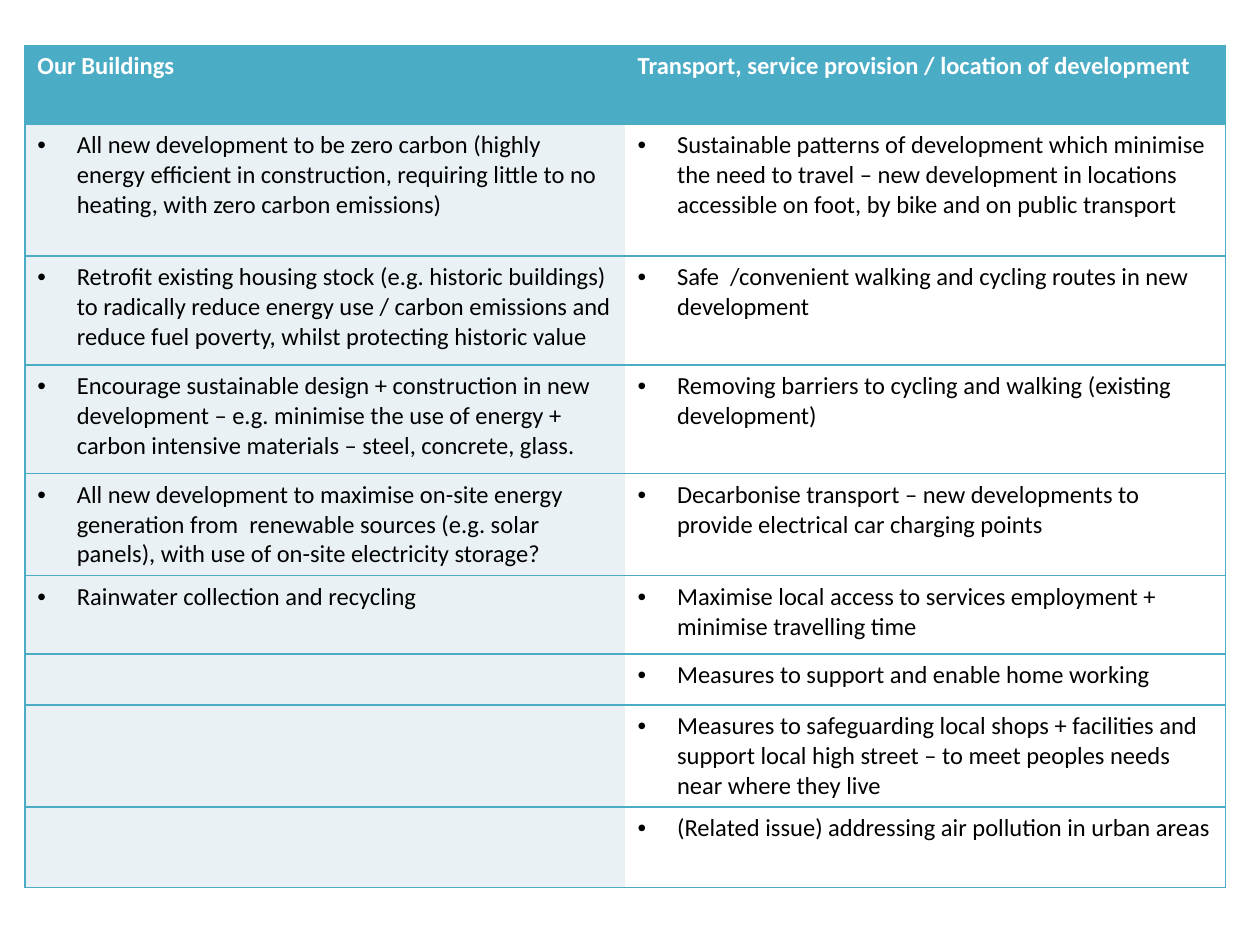
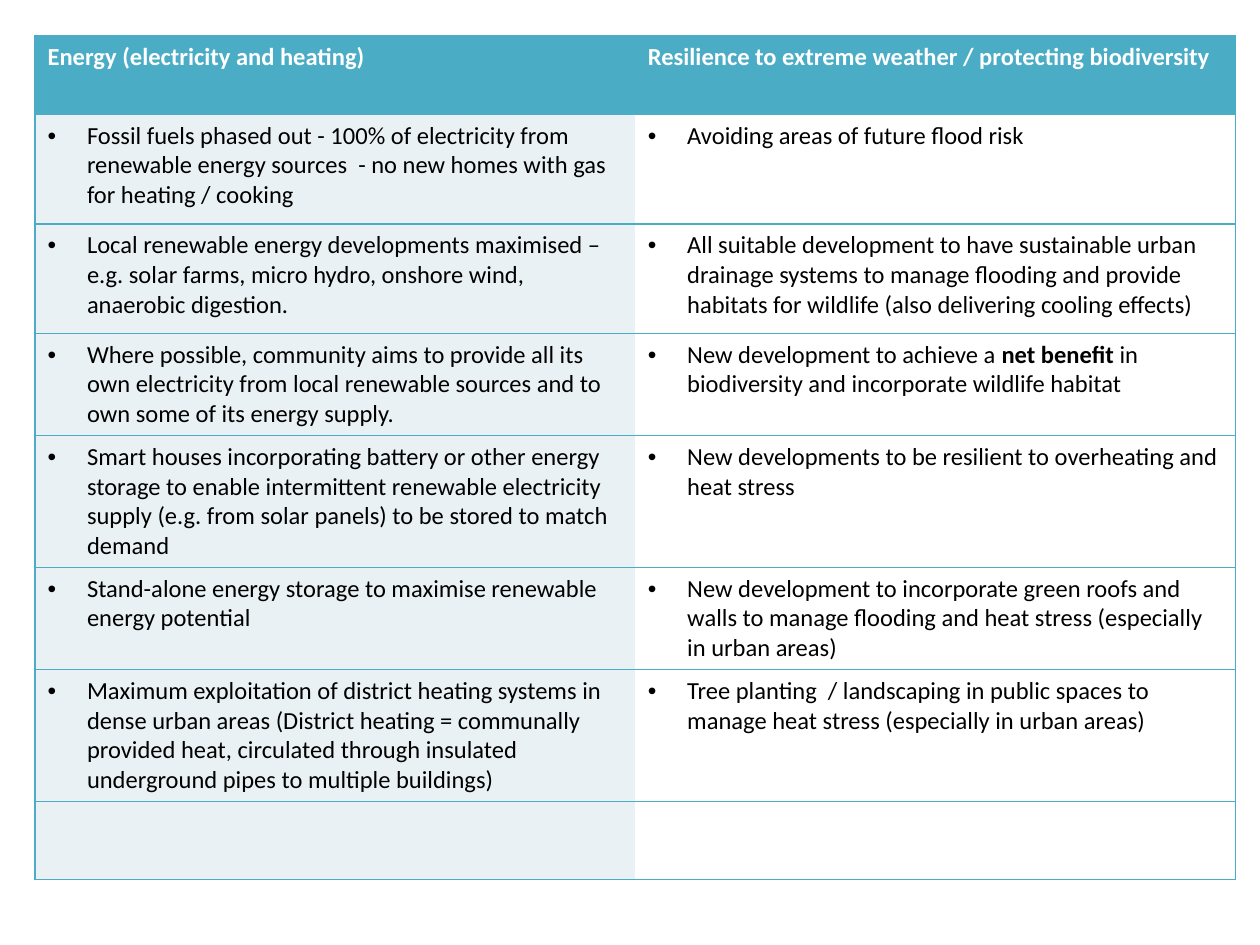
"""Builds two slides of planning measures against climate change, one two-column table each."""
from dataclasses import dataclass
from typing import Any

from lxml import etree
from pptx import Presentation
from pptx import util as u
from pptx.dml.color import RGBColor
from pptx.enum import text as t
from pptx.oxml.ns import qn

BUILDINGS_AND_TRANSPORT = [
    (45, "Our Buildings",
     "Transport, service provision / location of development"),
    (75.5, "All new development to be zero carbon (highly energy efficient in construction, "
     "requiring little to no heating, with zero carbon emissions)",
     "Sustainable patterns of development which minimise the need to travel – new development "
     "in locations accessible on foot, by bike and on public transport"),
    (62.3, "Retrofit existing housing stock (e.g. historic buildings) to radically reduce energy "
     "use / carbon emissions and reduce fuel poverty, whilst protecting historic value",
     "Safe  /convenient walking and cycling routes in new development"),
    (62, "Encourage sustainable design + construction in new development – e.g. minimise the use "
     "of energy + carbon intensive materials – steel, concrete, glass.",
     "Removing barriers to cycling and walking (existing development)"),
    (58.3, "All new development to maximise on-site energy generation from  renewable sources "
     "(e.g. solar panels), with use of on-site electricity storage?",
     "Decarbonise transport – new developments to provide electrical car charging points"),
    (44.6, "Rainwater collection and recycling",
     "Maximise local access to services employment + minimise travelling time"),
    (28.6, "", "Measures to support and enable home working"),
    (58.3, "", "Measures to safeguarding local shops + facilities and support local high street "
     "– to meet peoples needs near where they live"),
    (46.2, "", "(Related issue) addressing air pollution in urban areas"),
]

ENERGY_AND_RESILIENCE = [
    (44.8, "Energy (electricity and heating)",
     "Resilience to extreme weather / protecting biodiversity"),
    (62.6, "Fossil fuels phased out - 100% of electricity from renewable energy sources  - no new "
     "homes with gas for heating / cooking",
     "Avoiding areas of future flood risk"),
    (62.6, "Local renewable energy developments maximised – e.g. solar farms, micro hydro, "
     "onshore wind, anaerobic digestion.",
     "All suitable development to have sustainable urban drainage systems to manage flooding "
     "and provide habitats for wildlife (also delivering cooling effects)"),
    (58.3, "Where possible, community aims to provide all its own electricity from local "
     "renewable sources and to own some of its energy supply.",
     "New development to achieve a **net benefit **in biodiversity and incorporate wildlife "
     "habitat"),
    (75.4, "Smart houses incorporating battery or other energy storage to enable intermittent "
     "renewable electricity  supply (e.g. from solar panels) to be stored to match demand",
     "New developments to be resilient to overheating and heat stress"),
    (58.3, "Stand-alone energy storage to maximise renewable energy potential",
     "New development to incorporate green roofs and walls to manage flooding and heat stress "
     "(especially in urban areas)"),
    (75.4, "Maximum exploitation of district heating systems in dense urban areas (District "
     "heating = communally provided heat, circulated through insulated underground pipes to "
     "multiple buildings)",
     "Tree planting  / landscaping in public spaces to manage heat stress (especially in urban "
     "areas)"),
    (44.6, "", ""),
]


def rgb(value):
    """Turn a hex string into a colour."""
    return RGBColor.from_string(value)


def write(frame, content, *, font, size, color, bold=False, indent=0):
    """Write text into a frame, with **marked** parts in bold and a bullet if indented."""
    paragraph = frame.paragraphs[0]
    paragraph.alignment = t.PP_ALIGN.LEFT
    for place, part in enumerate(content.split("**")):
        run = paragraph.add_run()
        run.text = part
        run.font.name, run.font.size = font, u.Pt(size)
        run.font.bold = bold or place % 2 == 1
        run.font.color.rgb = rgb(color)
    if indent:
        margins = paragraph._p.get_or_add_pPr()
        margins.set("marL", str(u.Pt(indent)))
        margins.set("indent", str(-u.Pt(indent)))
        etree.SubElement(margins, qn("a:buFont")).set("typeface", "Arial")
        etree.SubElement(margins, qn("a:buChar")).set("char", "•")


@dataclass
class Deck:
    """Holds the style and the current slide."""
    show: Any
    slide: Any = None
    font: str = "Calibri"
    size: float = 14
    accent: str = "4BACC6"
    tint: str = "E9F1F5"
    paper: str = "FFFFFF"
    ink: str = "000000"
    column_width: float = 343
    bullet_indent: float = 22.5

    def new_slide(self):
        """Start a blank slide."""
        self.slide = self.show.slides.add_slide(self.show.slide_layouts[6])

    def borders(self, cell, sides):
        """Draw the accent line on the named sides of a cell and clear the others."""
        properties = cell._tc.get_or_add_tcPr()
        for place, side in enumerate("LRTB"):
            line = etree.Element(qn(f"a:ln{side}"), w=str(u.Pt(1)))
            if side in sides:
                fill = etree.SubElement(line, qn("a:solidFill"))
                etree.SubElement(fill, qn("a:srgbClr")).set("val", self.accent)
            else:
                etree.SubElement(line, qn("a:noFill"))
            properties.insert(place, line)

    def measures(self, left, top, rows):
        """Add a table of measures under two headings."""
        height = sum(row[0] for row in rows)
        table = self.slide.shapes.add_table(
            len(rows), 2, u.Pt(left), u.Pt(top), u.Pt(2 * self.column_width), u.Pt(height)).table
        table.horz_banding = False
        for column in table.columns:
            column.width = u.Pt(self.column_width)
        for number, (row_height, *entries) in enumerate(rows):
            table.rows[number].height = u.Pt(row_height)
            heading = number == 0
            for side, entry in enumerate(entries):
                cell = table.cell(number, side)
                cell.fill.solid()
                cell.fill.fore_color.rgb = rgb(
                    self.accent if heading else (self.tint, self.paper)[side])
                self.borders(cell, ("LTB", "RTB")[side])
                if entry:
                    write(cell.text_frame, entry, font=self.font, size=self.size, bold=heading,
                          color=self.paper if heading else self.ink,
                          indent=0 if heading else self.bullet_indent)


def main():
    """Build and save the slides."""
    show = Presentation()
    show.slide_width, show.slide_height = u.Pt(720), u.Pt(540)
    deck = Deck(show)
    for left, top, rows in ((14.2, 25.9, BUILDINGS_AND_TRANSPORT),
                            (20, 20.6, ENERGY_AND_RESILIENCE)):
        deck.new_slide()
        deck.measures(left, top, rows)
    show.save("out.pptx")


if __name__ == "__main__":
    main()
